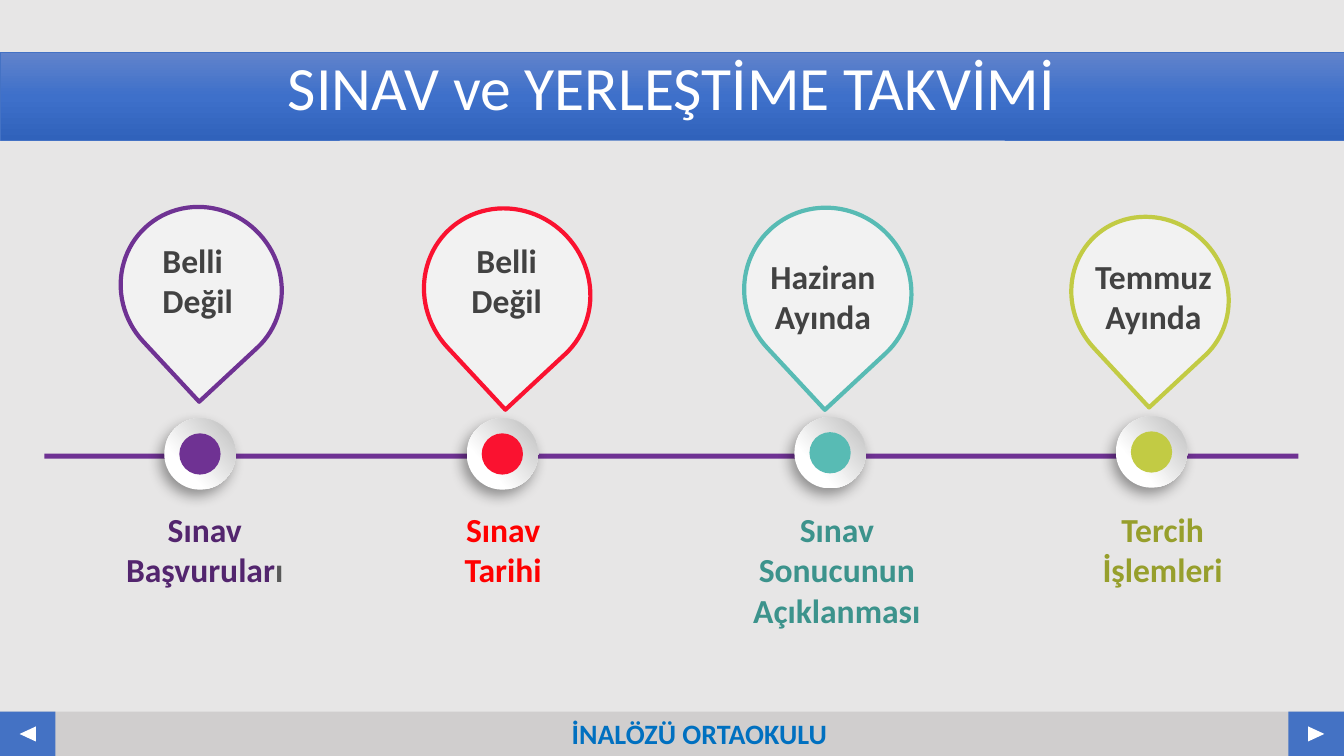
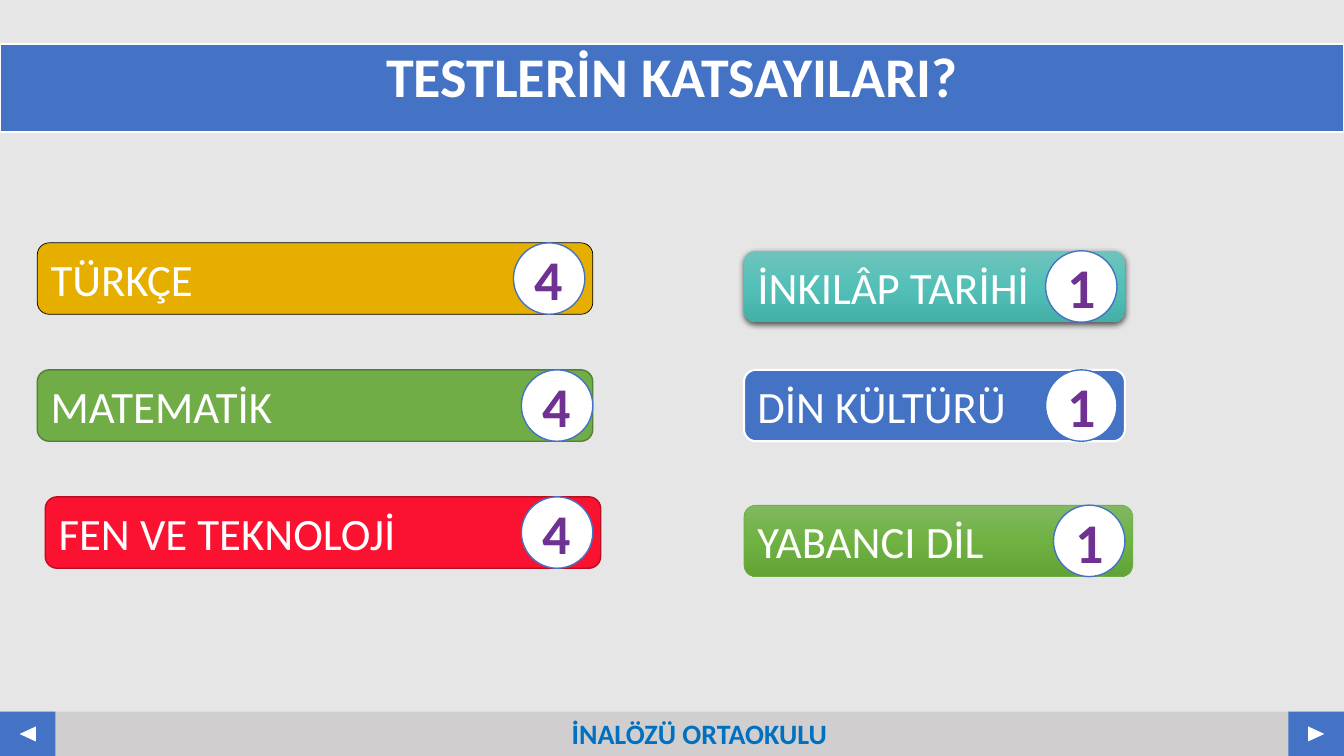
from dataclasses import dataclass

from pptx import Presentation
from pptx.dml.color import RGBColor
from pptx.enum.shapes import MSO_SHAPE
from pptx.enum.text import MSO_ANCHOR, PP_ALIGN
from pptx.oxml import parse_xml
from pptx.oxml.ns import nsdecls, qn
from pptx.util import Cm, Pt

FONT = "Calibri"
PAGE_WIDTH, PAGE_HEIGHT = 33.87, 19.05
FOOTER_HEIGHT = 1.12
BUTTON_WIDTH = 1.4
TITLE_HEIGHT = 2.21
PILL_HEIGHT = 1.8
BLUE, WHITE, PURPLE, RED = "4472C4", "FFFFFF", "6F3293", "FA1230"
TEAL, OLIVE, GREEN = "58BBB4", "C2CB44", "70AD47"
BLUE_BLEND = ([(0, "6183CB"), (50, "3E70CA"), (100, "3062BB")], 90)
TEAL_BLEND = ([(0, "6FC3BC"), (50, "53C0B8"), (100, "44B0A8")], 90)
GREEN_BLEND = ([(0, "81B861"), (50, "6FB242"), (100, "62A336")], 90)
SILVER_BLEND = ([(29, WHITE), (98, "BFBFBF")], 318)


@dataclass
class Milestone:
    center: float
    axis: float
    color: str
    pin_shift: float
    pin_top: float
    pin_width: float
    pin_height: float
    note: str
    note_shift: float
    note_top: float
    note_width: float
    note_align: PP_ALIGN
    label: list
    label_shift: float
    label_width: float


@dataclass
class Subject:
    name: str
    weight: str
    left: float
    top: float
    width: float
    fill: object
    line: tuple = None
    shadow: tuple = None
    badge_gap: float = 0.2


MILESTONES = [
    Milestone(5.04, 11.44, PURPLE, 0.03, 5.18, 3.99, 4.14,
              "Belli\nDeğil", -0.04, 5.92, 2.31, PP_ALIGN.LEFT,
              [("Sınav Başvurular", "53256E"), ("ı", "595959")], 0.12, 4.83),
    Milestone(12.66, 11.44, RED, 0.12, 5.21, 4.11, 4.29,
              "Belli\nDeğil", 0.11, 5.92, 2.31, PP_ALIGN.CENTER,
              [("Sınav Tarihi", "FF0000")], 0.02, 4.27),
    Milestone(20.92, 11.41, TEAL, -0.06, 5.21, 4.17, 4.27,
              "Haziran\nAyında", -0.18, 6.32, 3.58, PP_ALIGN.CENTER,
              [("Sınav Sonucunun Açıklanması", "3C938C")], 0.17, 5.49),
    Milestone(29.02, 11.39, OLIVE, -0.04, 5.41, 3.86, 4.09,
              "Temmuz\nAyında", 0.05, 6.32, 3.48, PP_ALIGN.CENTER,
              [("Tercih İşlemleri", "979F2C")], 0.28, 3.94),
]

SUBJECTS = [
    Subject("TÜRKÇE", "4", 0.94, 6.12, 14, "E6AF00", ("000000", 0.5)),
    Subject("MATEMATİK", "4", 0.94, 9.32, 14, GREEN, ("538035", 1), badge_gap=0),
    Subject("FEN VE TEKNOLOJİ", "4", 1.14, 12.52, 14, RED, ("B90D24", 1)),
    Subject("İNKILÂP TARİHİ", "1", 18.75, 6.32, 9.6, TEAL_BLEND,
            shadow=(63, 4.5, 1.5, 90)),
    Subject("DİN KÜLTÜRÜ", "1", 18.75, 9.32, 9.6, BLUE, (WHITE, 1.5)),
    Subject("YABANCI DİL", "1", 18.75, 12.73, 9.8, GREEN_BLEND, (GREEN, 0.5)),
]


def color(value):
    return RGBColor.from_string(value)


def paint(shape, fill):
    if isinstance(fill, str):
        shape.fill.solid()
        shape.fill.fore_color.rgb = color(fill)
        return
    stops, angle = fill
    shape.fill.gradient()
    shape.fill.gradient_angle = 360 - angle
    stop_list = next(shape.element.spPr.iter(qn("a:gsLst")))
    stop_list.clear()
    for position, value in stops:
        stop_list.append(parse_xml(
            f'<a:gs {nsdecls("a")} pos="{position * 1000}">'
            f'<a:srgbClr val="{value}"/></a:gs>'))


def cast_shadow(shape, opacity, blur, distance, angle):
    effects = shape.element.spPr.find(qn("a:effectLst"))
    effects.append(parse_xml(
        f'<a:outerShdw {nsdecls("a")} blurRad="{Pt(blur)}" dist="{Pt(distance)}" '
        f'dir="{angle * 60000}" algn="ctr" rotWithShape="0">'
        f'<a:srgbClr val="000000"><a:alpha val="{opacity * 1000}"/></a:srgbClr>'
        f'</a:outerShdw>'))


def add_block(page, kind, box, fill, line=None, shadow=None, rotation=0):
    shape = page.shapes.add_shape(kind, *[Cm(length) for length in box])
    shape.shadow.inherit = False
    shape.rotation = rotation
    paint(shape, fill)
    if line:
        shape.line.color.rgb = color(line[0])
        shape.line.width = Pt(line[1])
    else:
        shape.line.fill.background()
    if shadow:
        cast_shadow(shape, *shadow)
    return shape


def style(span, size, value, bold):
    span.font.name = FONT
    span.font.size = Pt(size)
    span.font.bold = bold
    span.font.color.rgb = color(value)


def write(shape, text, size, value, bold=False, align=PP_ALIGN.CENTER,
          anchor=MSO_ANCHOR.MIDDLE):
    frame = shape.text_frame
    frame.text = text
    frame.vertical_anchor = anchor
    for para in frame.paragraphs:
        para.alignment = align
        for span in para.runs:
            style(span, size, value, bold)
    return frame


def add_text(page, box, text, size, value, align=PP_ALIGN.CENTER, wrap=True):
    text_box = page.shapes.add_textbox(*[Cm(length) for length in box])
    frame = write(text_box, text, size, value, True, align, MSO_ANCHOR.TOP)
    frame.word_wrap = wrap
    return frame


def draw_footer(page):
    top = PAGE_HEIGHT - FOOTER_HEIGHT
    add_block(page, MSO_SHAPE.RECTANGLE, (0, top, PAGE_WIDTH, FOOTER_HEIGHT), "D0CECE")
    for left, rotation in ((0, 270), (PAGE_WIDTH - BUTTON_WIDTH, 90)):
        add_block(page, MSO_SHAPE.RECTANGLE,
                  (left, top, BUTTON_WIDTH, FOOTER_HEIGHT), BLUE)
        add_block(page, MSO_SHAPE.ISOSCELES_TRIANGLE,
                  (left + 0.51, top + 0.36, 0.38, 0.41), WHITE, rotation=rotation)
    add_text(page, (12.52, top, 10.21, FOOTER_HEIGHT), "İNALÖZÜ ORTAOKULU", 20, "0070C0")


def draw_title(page, top, text, size, bold, fill, line):
    band = add_block(page, MSO_SHAPE.RECTANGLE,
                     (0, top, PAGE_WIDTH, TITLE_HEIGHT), fill, line)
    frame = write(band, text, size, WHITE, bold, anchor=MSO_ANCHOR.TOP)
    frame.paragraphs[0].line_spacing = 0.9


def draw_milestone(page, item):
    for size, fill, shadow in ((1.8, SILVER_BLEND, (39, 10, 5, 123)),
                               (1.04, item.color, None)):
        box = (item.center - size / 2, item.axis - size / 2, size, size)
        add_block(page, MSO_SHAPE.OVAL, box, fill, shadow=shadow)
    pin_left = item.center + item.pin_shift - item.pin_width / 2
    add_block(page, MSO_SHAPE.TEAR,
              (pin_left, item.pin_top, item.pin_width, item.pin_height),
              "F2F2F2", (item.color, 3), rotation=137.1)
    note_left = item.center + item.note_shift - item.note_width / 2
    add_text(page, (note_left, item.note_top, item.note_width, 2.31),
             item.note, 24, "424242", item.note_align, wrap=False)
    label_left = item.center + item.label_shift - item.label_width / 2
    (text, value), *rest = item.label
    frame = add_text(page, (label_left, 12.7, item.label_width, 2.31), text, 24, value)
    for text, value in rest:
        span = frame.paragraphs[0].add_run()
        span.text = text
        style(span, 24, value, True)


def draw_subject(page, item):
    pill = add_block(page, MSO_SHAPE.FLOWCHART_ALTERNATE_PROCESS,
                     (item.left, item.top, item.width, PILL_HEIGHT),
                     item.fill, item.line, item.shadow)
    write(pill, item.name, 32, WHITE, align=PP_ALIGN.LEFT)
    badge_left = item.left + item.width - item.badge_gap - PILL_HEIGHT
    badge = add_block(page, MSO_SHAPE.OVAL,
                      (badge_left, item.top, PILL_HEIGHT, PILL_HEIGHT), WHITE, (BLUE, 1))
    write(badge, item.weight, 40, PURPLE, True)


def add_page(deck):
    page = deck.slides.add_slide(deck.slide_layouts[6])
    page.background.fill.solid()
    page.background.fill.fore_color.rgb = color("E7E6E6")
    draw_footer(page)
    return page


def build_calendar(deck):
    page = add_page(deck)
    draw_title(page, 1.32, "SINAV ve YERLEŞTİME TAKVİMİ", 44, False,
               BLUE_BLEND, (BLUE, 0.5))
    add_block(page, MSO_SHAPE.RECTANGLE, (1.12, 11.43, 31.6, 0.13), PURPLE)
    for item in MILESTONES:
        draw_milestone(page, item)


def build_weights(deck):
    page = add_page(deck)
    draw_title(page, 1.12, "TESTLERİN KATSAYILARI?", 40, True, BLUE, (WHITE, 1.5))
    for item in SUBJECTS:
        draw_subject(page, item)


def main():
    deck = Presentation()
    deck.slide_width, deck.slide_height = Cm(PAGE_WIDTH), Cm(PAGE_HEIGHT)
    build_calendar(deck)
    build_weights(deck)
    deck.save("out.pptx")


if __name__ == "__main__":
    main()
